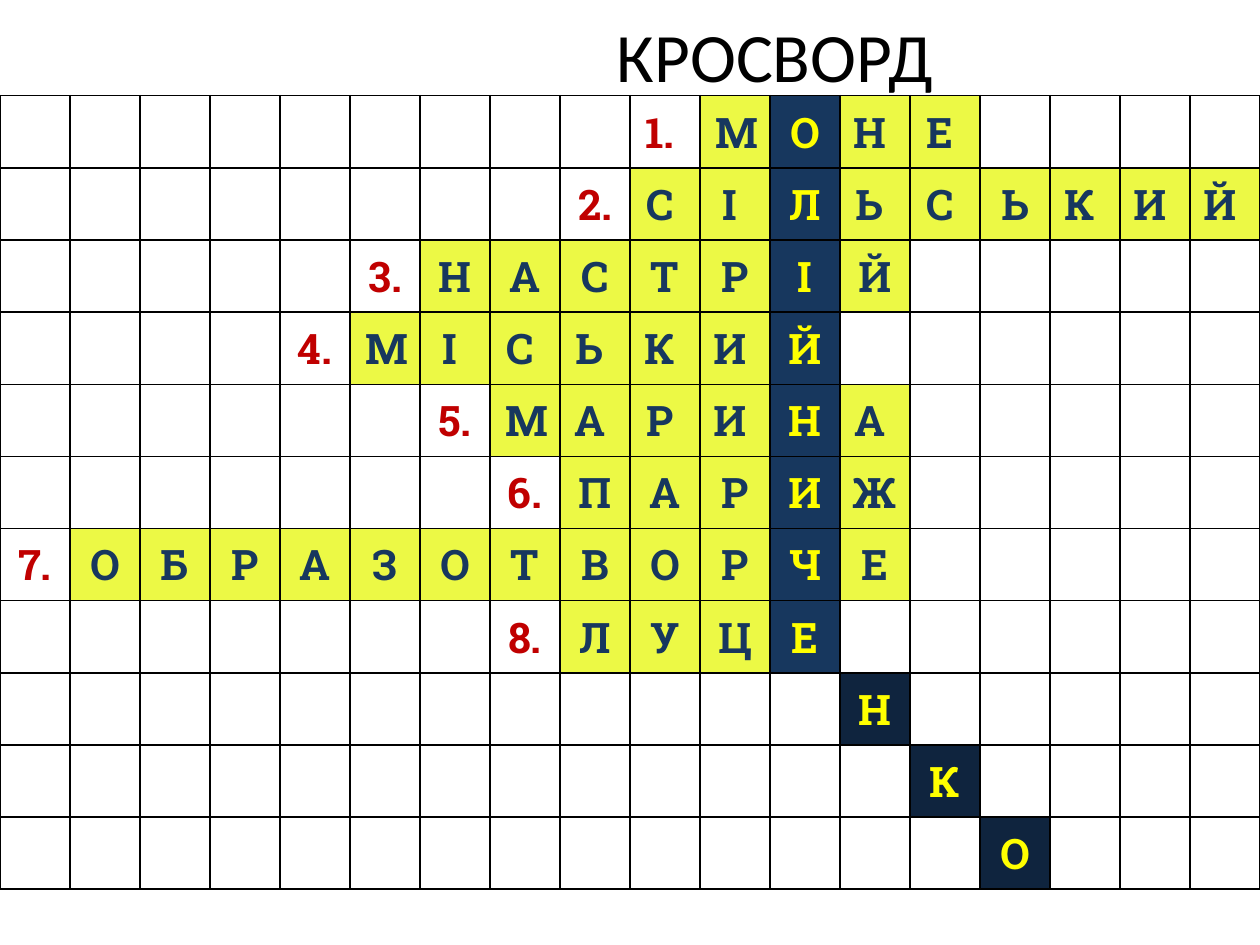
from lxml import etree
from pptx import Presentation
from pptx.dml.color import RGBColor
from pptx.enum.text import MSO_ANCHOR, PP_ALIGN
from pptx.oxml.ns import qn
from pptx.util import Cm, Pt

CENTER = PP_ALIGN.CENTER
MIDDLE = MSO_ANCHOR.MIDDLE
WHITE, YELLOW, RED = "FFFFFF", "FFFF00", "C00000"
NAVY, DARK_NAVY, LIME = "17375E", "0F243E", "ECF945"
ROWS, COLUMNS, KEY_COLUMN = 11, 18, 11

# Column of the number, number, then the letters; a trailing space nudges a letter left
ANSWERS = [
    (9, "1. ", "М |О|Н |Е "),
    (8, "2.", "С |І |Л|Ь |С |Ь|К |И |Й "),
    (5, "3.", "Н|А|С|Т|Р|І|Й"),
    (4, "4.", "М |І |С |Ь |К |И |Й"),
    (6, "5.", "М |А |Р |И |Н|А "),
    (7, "6.", "П|А|Р|И|Ж"),
    (0, "7.", "О|Б|Р|А|З|О|Т|В|О|Р|Ч|Е"),
    (7, "8.", "Л|У|Ц|Е"),
]
KEYWORD_TAIL = "НКО"


def color(value):
    return RGBColor.from_string(value)


def fill_cell(cell, text, text_color, background):
    cell.fill.solid()
    cell.fill.fore_color.rgb = color(background)
    cell.vertical_anchor = MIDDLE
    paragraph = cell.text_frame.paragraphs[0]
    paragraph.text = text
    paragraph.alignment = CENTER
    paragraph.font.name = "Roboto Slab"
    paragraph.font.size = Pt(24)
    paragraph.font.bold = True
    paragraph.font.color.rgb = color(text_color)


presentation = Presentation()
presentation.slide_width = Cm(25.4)
presentation.slide_height = Cm(19.05)
slide = presentation.slides.add_slide(presentation.slide_layouts[5])

# Title
title = slide.shapes.title
title.left, title.top, title.width, title.height = Cm(11.1), Cm(0.33), Cm(9.04), Cm(1.55)
title.text_frame.text = "КРОСВОРД"
title.text_frame.vertical_anchor = MIDDLE
paragraph = title.text_frame.paragraphs[0]
paragraph.alignment = CENTER
paragraph.font.name = "Calibri"
paragraph.font.size = Pt(39.6)
paragraph.font.color.rgb = color("000000")

# Empty grid
table = slide.shapes.add_table(
    ROWS, COLUMNS, Cm(0), Cm(1.93), Cm(25.4), Cm(16)).table
table.first_row = False
table.horz_banding = False
for column in table.columns:
    column.width = Cm(25.4 / COLUMNS)
for row in table.rows:
    row.height = Cm(16 / ROWS)
for cell in table.iter_cells():
    properties = cell._tc.get_or_add_tcPr()
    for side in ("a:lnL", "a:lnR", "a:lnT", "a:lnB"):
        border = etree.SubElement(properties, qn(side), w=str(Pt(1)))
        line_fill = etree.SubElement(border, qn("a:solidFill"))
        etree.SubElement(line_fill, qn("a:srgbClr"), val="000000")
    cell.fill.background()

# Answers, with the keyword running down the key column
for row_index, (start, number, letters) in enumerate(ANSWERS):
    fill_cell(table.cell(row_index, start), number, RED, WHITE)
    for column_index, letter in enumerate(letters.split("|"), start + 1):
        is_key = column_index == KEY_COLUMN
        fill_cell(table.cell(row_index, column_index), letter,
                  YELLOW if is_key else NAVY, NAVY if is_key else LIME)

# The keyword ends on a diagonal
for step, letter in enumerate(KEYWORD_TAIL):
    fill_cell(table.cell(len(ANSWERS) + step, KEY_COLUMN + 1 + step),
              letter, YELLOW, DARK_NAVY)

presentation.save("out.pptx")
